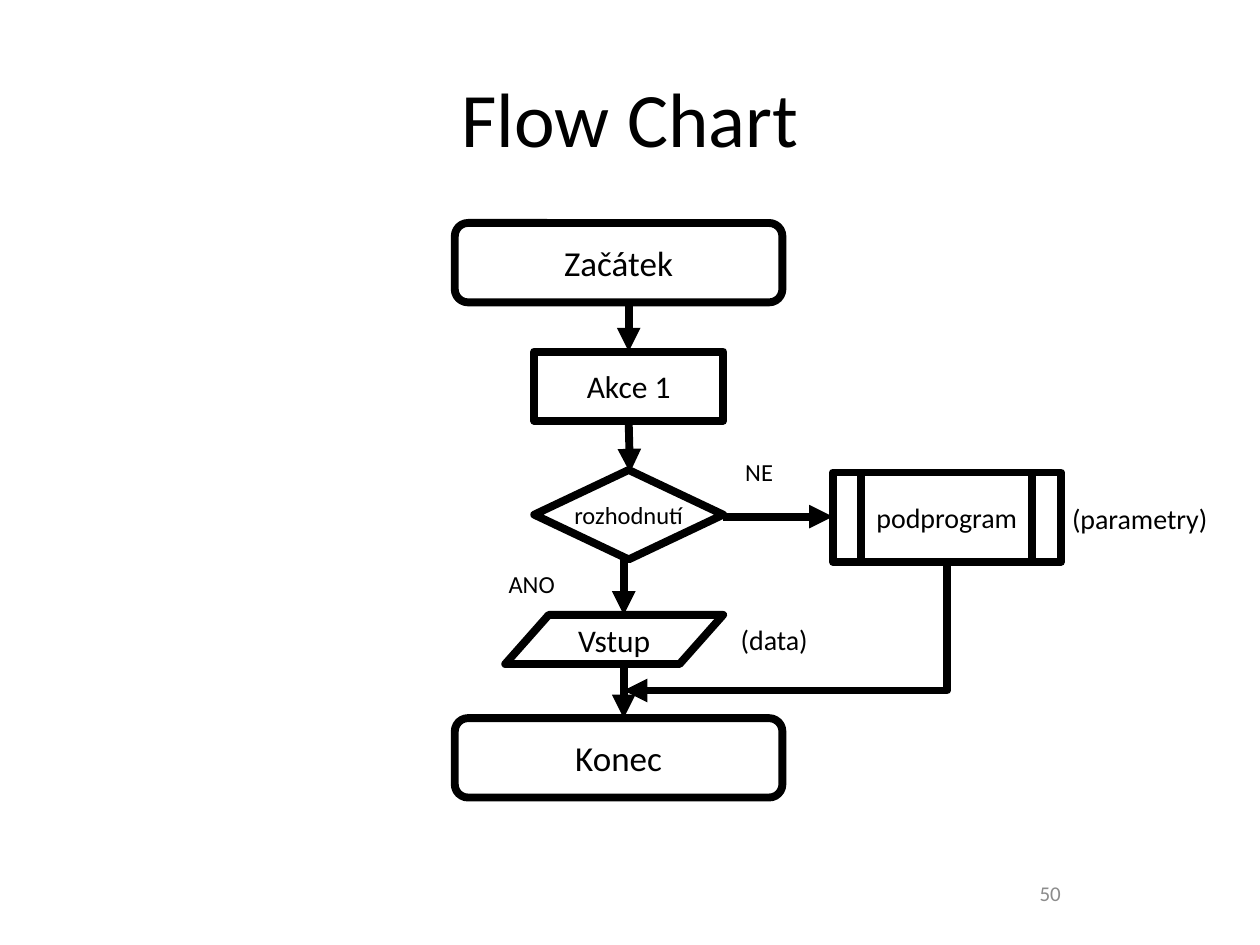
from dataclasses import dataclass
from typing import Optional

from lxml.etree import SubElement
from pptx import Presentation
from pptx.dml.color import RGBColor
from pptx.enum.shapes import MSO_CONNECTOR, MSO_SHAPE
from pptx.enum.text import MSO_ANCHOR, MSO_AUTO_SIZE, PP_ALIGN
from pptx.oxml.ns import qn
from pptx.util import Inches, Pt

COLUMNS, ROWS = 100, 75
SLIDE_WIDTH, SLIDE_HEIGHT = Inches(10), Inches(7.5)


@dataclass(frozen=True)
class Theme:
    font: str = "Calibri"
    ink: RGBColor = RGBColor(0, 0, 0)
    paper: RGBColor = RGBColor(255, 255, 255)
    muted: RGBColor = RGBColor(0x8C, 0x8C, 0x8C)
    stroke: float = 4.5
    title: int = 44
    terminal: int = 20
    step: int = 18
    detail: int = 16
    branch: int = 14
    number: int = 12


@dataclass(frozen=True)
class Area:
    column: float
    row: float
    columns: float
    rows: float

    @property
    def center(self) -> float:
        return self.column + self.columns / 2

    @property
    def right(self) -> float:
        return self.column + self.columns

    @property
    def bottom(self) -> float:
        return self.row + self.rows

    def lengths(self) -> tuple:
        return x(self.column), y(self.row), x(self.columns), y(self.rows)


@dataclass(frozen=True)
class Step:
    text: str
    outline: MSO_SHAPE
    area: Area
    size: int


@dataclass(frozen=True)
class Label:
    text: str
    area: Area
    size: int
    align: PP_ALIGN = PP_ALIGN.LEFT
    color: RGBColor = Theme.ink
    anchor: MSO_ANCHOR = MSO_ANCHOR.TOP
    fill: Optional[RGBColor] = None
    wrap: bool = False


@dataclass(frozen=True)
class Arrow:
    column: float
    row: float
    end_column: float
    end_row: float


THEME = Theme()

START = Step("Začátek", MSO_SHAPE.FLOWCHART_ALTERNATE_PROCESS, Area(36.1, 17.7, 26, 6.3), THEME.terminal)
END = Step("Konec", MSO_SHAPE.FLOWCHART_ALTERNATE_PROCESS, Area(36.1, 57, 26, 6.3), THEME.terminal)
ACTION = Step("Akce 1", MSO_SHAPE.FLOWCHART_PROCESS, Area(42.4, 27.9, 15, 5.5), THEME.step)
DECISION = Step("rozhodnutí", MSO_SHAPE.FLOWCHART_DECISION, Area(42.4, 37.3, 15, 7.1), THEME.branch)
SUBPROGRAM = Step("podprogram", MSO_SHAPE.FLOWCHART_PREDEFINED_PROCESS, Area(66.1, 37.5, 18.1, 7.1), THEME.detail)
INPUT = Step("Vstup", MSO_SHAPE.FLOWCHART_DATA, Area(40.1, 48.8, 17.3, 3.9), THEME.step)
STEPS = (START, END, ACTION, DECISION, SUBPROGRAM, INPUT)

SPINE = ACTION.area.center
LOWER_SPINE = 49.5
BRANCH_ROW = 41
JOIN_ROW = 54.8

ARROWS = (
    Arrow(SPINE, START.area.bottom, SPINE, ACTION.area.row),
    Arrow(SPINE, ACTION.area.bottom + 0.2, SPINE + 0.1, DECISION.area.row + 0.2),
    Arrow(DECISION.area.right, BRANCH_ROW, SUBPROGRAM.area.column, BRANCH_ROW),
    Arrow(LOWER_SPINE, DECISION.area.bottom, LOWER_SPINE, INPUT.area.row),
    Arrow(LOWER_SPINE, INPUT.area.bottom, LOWER_SPINE, END.area.row),
)
RETURN_ARROW = Arrow(SUBPROGRAM.area.center, SUBPROGRAM.area.bottom + 0.3, LOWER_SPINE, JOIN_ROW)

LABELS = (
    Label("ANO", Area(37.7, 44.7, 9, 3.3), THEME.branch, PP_ALIGN.CENTER, fill=THEME.paper, wrap=True),
    Label("NE", Area(56, 35.8, 8.5, 3.3), THEME.branch, PP_ALIGN.CENTER, fill=THEME.paper, wrap=True),
    Label("(parametry)", Area(84.1, 39.3, 13.5, 3.7), THEME.detail),
    Label("(data)", Area(57.8, 48.9, 7.8, 3.7), THEME.detail),
    Label("50", Area(71.7, 68.3, 23.3, 5.2), THEME.number, PP_ALIGN.CENTER, THEME.muted, MSO_ANCHOR.MIDDLE, wrap=True),
)


def x(columns: float) -> int:
    return round(SLIDE_WIDTH * columns / COLUMNS)


def y(rows: float) -> int:
    return round(SLIDE_HEIGHT * rows / ROWS)


def write(shape, text: str, size: int, align=PP_ALIGN.CENTER, color=THEME.ink,
          anchor=MSO_ANCHOR.MIDDLE, wrap=False) -> None:
    frame = shape.text_frame
    frame.text = text
    frame.word_wrap = wrap
    frame.vertical_anchor = anchor
    paragraph = frame.paragraphs[0]
    paragraph.alignment = align
    font = paragraph.runs[0].font
    font.name, font.size = THEME.font, Pt(size)
    font.color.rgb = color


def draw_title(slide, text: str, area: Area) -> None:
    title = slide.shapes.title
    title.left, title.top, title.width, title.height = area.lengths()
    write(title, text, THEME.title, wrap=True)


def draw_step(slide, step: Step) -> None:
    shape = slide.shapes.add_shape(step.outline, *step.area.lengths())
    shape.shadow.inherit = False
    shape.fill.background()
    shape.line.color.rgb = THEME.ink
    shape.line.width = Pt(THEME.stroke)
    write(shape, step.text, step.size)


def draw_label(slide, label: Label) -> None:
    box = slide.shapes.add_textbox(*label.area.lengths())
    if label.fill is not None:
        box.fill.solid()
        box.fill.fore_color.rgb = label.fill
    write(box, label.text, label.size, label.align, label.color, label.anchor, label.wrap)
    if label.anchor == MSO_ANCHOR.TOP:
        box.text_frame.auto_size = MSO_AUTO_SIZE.SHAPE_TO_FIT_TEXT


def draw_arrow(slide, arrow: Arrow, kind=MSO_CONNECTOR.STRAIGHT):
    connector = slide.shapes.add_connector(
        kind, x(arrow.column), y(arrow.row), x(arrow.end_column), y(arrow.end_row))
    connector.line.color.rgb = THEME.ink
    connector.line.width = Pt(THEME.stroke)
    SubElement(connector.line._get_or_add_ln(), qn("a:tailEnd"), type="triangle")
    SubElement(connector._element.spPr, qn("a:effectLst"))
    return connector


def draw_return_arrow(slide, arrow: Arrow) -> None:
    middle_column = (arrow.column + arrow.end_column) / 2
    middle_row = (arrow.row + arrow.end_row) / 2
    half_drop = (arrow.end_row - arrow.row) / 2
    half_reach = (arrow.column - arrow.end_column) / 2
    unturned = Arrow(middle_column - half_drop, middle_row - half_reach,
                     middle_column + half_drop, middle_row + half_reach)
    properties = draw_arrow(slide, unturned, MSO_CONNECTOR.ELBOW)._element.spPr
    properties.find(qn("a:xfrm")).set("rot", str(90 * 60000))
    properties.find(qn("a:prstGeom")).set("prst", "bentConnector2")


def main() -> None:
    presentation = Presentation()
    presentation.slide_width, presentation.slide_height = SLIDE_WIDTH, SLIDE_HEIGHT
    slide = presentation.slides.add_slide(presentation.slide_layouts.get_by_name("Title Only"))
    draw_title(slide, "Flow Chart", Area(5, 3, 90, 12.5))
    for step in STEPS:
        draw_step(slide, step)
    for arrow in ARROWS:
        draw_arrow(slide, arrow)
    draw_return_arrow(slide, RETURN_ARROW)
    for label in LABELS:
        draw_label(slide, label)
    presentation.save("out.pptx")


if __name__ == "__main__":
    main()
